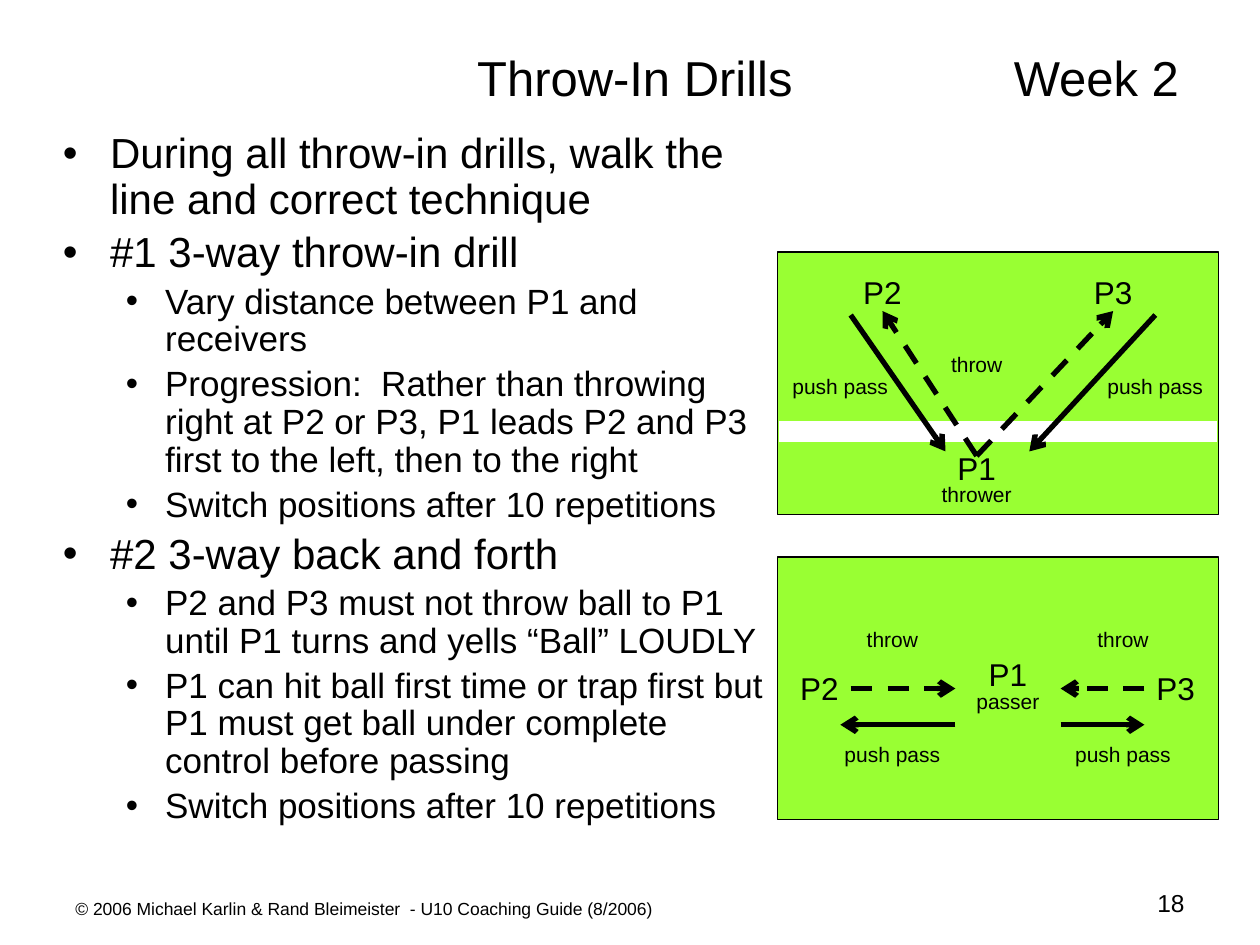
from dataclasses import dataclass
from typing import NamedTuple

from lxml import etree
from pptx import Presentation
from pptx import util as u
from pptx.dml.color import RGBColor
from pptx.enum import dml, shapes, text
from pptx.oxml.ns import qn

Cm, Pt = u.Cm, u.Pt


@dataclass(frozen=True)
class Theme:
    font: str = "Arial"
    ink: str = "000000"
    chalk: str = "FFFFFF"
    grass: str = "99FF33"
    title: int = 28
    head: int = 24
    item: int = 20
    name: int = 18
    page: int = 14
    note: int = 12
    foot: int = 10


T = Theme()


class Box(NamedTuple):
    x: float
    y: float
    w: float
    h: float


class Label(NamedTuple):
    """Text centred on mid; each bit is a string and its size."""
    mid: float
    top: float
    bits: tuple
    w: float = 2.12
    h: float = 0.41
    lead: float = 0.8


class Line(NamedTuple):
    x1: float
    y1: float
    x2: float
    y2: float
    dash: bool = False
    head: bool = True
    color: str = T.ink
    width: float = 3


class Drill(NamedTuple):
    top: float
    labels: list
    lines: list


def player(mid: float, top: float, name: str) -> Label:
    return Label(mid, top, ((name, T.name),), 1.27, 0.76, 1)


def lead(mid: float, top: float, role: str) -> Label:
    return Label(mid, top, (("P1", T.name), (" " + role, T.note)), h=1.02)


def note(mid: float, top: float, words: str) -> Label:
    return Label(mid, top, ((words, T.note),))


def rgb(code: str) -> RGBColor:
    return RGBColor.from_string(code)


def add_run(para, words: str, size: int) -> None:
    run = para.add_run()
    run.text = words
    run.font.name, run.font.size = T.font, Pt(size)
    run.font.color.rgb = rgb(T.ink)


def add_frame(host, box: Box, inset: tuple = (0.25, 0.13)):
    frame = host.add_textbox(*map(Cm, box)).text_frame
    frame.word_wrap = True
    frame.margin_left = frame.margin_right = Cm(inset[0])
    frame.margin_top = frame.margin_bottom = Cm(inset[1])
    return frame


def add_line(host, line: Line, dx: float, dy: float) -> None:
    ends = (line.x1 + dx, line.y1 + dy, line.x2 + dx, line.y2 + dy)
    shape = host.add_connector(shapes.MSO_CONNECTOR.STRAIGHT, *map(Cm, ends))
    shape.line.color.rgb = rgb(line.color)
    shape.line.width = Pt(line.width)
    if line.dash:
        shape.line.dash_style = dml.MSO_LINE.DASH
    if line.head:
        etree.SubElement(shape.line._get_or_add_ln(), qn("a:tailEnd"), type="arrow")
    etree.SubElement(shape._element.spPr, qn("a:effectLst"))


def add_label(host, label: Label, dx: float, dy: float) -> None:
    box = Box(label.mid - label.w / 2 + dx, label.top + dy, label.w, label.h)
    para = add_frame(host, box, (0, 0)).paragraphs[0]
    para.alignment = text.PP_ALIGN.CENTER
    para.line_spacing = label.lead
    for words, size in label.bits:
        add_run(para, words, size)


def add_drill(slide, drill: Drill, left: float = 15.67) -> None:
    host = slide.shapes.add_group_shape().shapes
    field = host.add_shape(shapes.MSO_SHAPE.RECTANGLE,
                           *map(Cm, (left, drill.top, 8.89, 5.29)))
    field.shadow.inherit = False
    field.fill.solid()
    field.fill.fore_color.rgb = rgb(T.grass)
    field.line.color.rgb = rgb(T.ink)
    field.line.width = Pt(0.75)
    for label in drill.labels:
        add_label(host, label, left, drill.top)
    for line in drill.lines:
        add_line(host, line, left, drill.top)


def add_bullet(para, level: int, words: str, first: bool) -> None:
    size, left, hang = ((T.head, 0.95, 0.95), (T.item, 2.06, 0.79))[level]
    para.level = level
    para.line_spacing = 0.9
    para.space_before = Pt(0 if first else size * 0.2)
    props = para._p.get_or_add_pPr()
    props.set("marL", str(Cm(left)))
    props.set("indent", str(-Cm(hang)))
    etree.SubElement(props, qn("a:buFont"), typeface=T.font)
    etree.SubElement(props, qn("a:buChar"), char="•")
    add_run(para, words, size)


POINTS = [
    (0, "During all throw-in drills, walk the line and correct technique"),
    (0, "#1 3-way throw-in drill"),
    (1, "Vary distance between P1 and receivers"),
    (1, "Progression:  Rather than throwing right at P2 or P3, P1 leads P2 "
        "and P3 first to the left, then to the right"),
    (1, "Switch positions after 10 repetitions"),
    (0, "#2 3-way back and forth"),
    (1, "P2 and P3 must not throw ball to P1 until P1 turns and yells “Ball” LOUDLY"),
    (1, "P1 can hit ball first time or trap first but P1 must get ball under "
        "complete control before passing"),
    (1, "Switch positions after 10 repetitions"),
]

# Places are in cm from the top left corner of each field
DRILLS = [
    Drill(5.08,
          [lead(4.02, 4.11, "thrower"), player(2.12, 0.43, "P2"),
           player(6.77, 0.43, "P3"), note(4.02, 2.11, "throw"),
           note(1.27, 2.54, "push pass"), note(7.62, 2.54, "push pass")],
          [Line(0.03, 3.61, 8.86, 3.61, head=False, color=T.chalk, width=12),
           Line(4.02, 4.11, 2.12, 1.19, dash=True),
           Line(4.02, 4.11, 6.77, 1.19, dash=True),
           Line(1.48, 1.27, 3.39, 4.02), Line(7.62, 1.27, 5.08, 4.02)]),
    Drill(11.23,
          [lead(4.65, 2.13, "passer"), player(0.85, 2.26, "P2"),
           player(8.03, 2.26, "P3")]
          + [note(mid, top, words) for mid in (2.32, 6.97)
             for top, words in ((1.5, "throw"), (3.81, "push pass"))],
          [Line(1.48, 2.65, 3.59, 2.65, dash=True),
           Line(7.4, 2.65, 5.71, 2.65, dash=True),
           Line(3.59, 3.38, 1.27, 3.38), Line(5.71, 3.38, 7.4, 3.38)]),
]


def main() -> None:
    deck = Presentation()
    deck.slide_width, deck.slide_height = Cm(25.4), Cm(19.05)
    slide = deck.slides.add_slide(deck.slide_layouts[6])

    # Title, set out with two tab stops
    frame = add_frame(slide.shapes, Box(1.27, 0.76, 22.86, 1.57))
    frame.vertical_anchor = text.MSO_ANCHOR.MIDDLE
    para = frame.paragraphs[0]
    tabs = etree.SubElement(para._p.get_or_add_pPr(), qn("a:tabLst"))
    for stop in (8.1, 18.92):
        etree.SubElement(tabs, qn("a:tab"), pos=str(Cm(stop)), algn="l")
    add_run(para, "\tThrow-In Drills\tWeek 2", T.title)

    # Bulleted list
    frame = add_frame(slide.shapes, Box(1.27, 2.54, 14.18, 15.04), (0, 0.13))
    for i, (level, words) in enumerate(POINTS):
        para = frame.add_paragraph() if i else frame.paragraphs[0]
        add_bullet(para, level, words, i == 0)

    # Drill diagrams
    for drill in DRILLS:
        add_drill(slide, drill)

    # Footer and page number
    frame = add_frame(slide.shapes, Box(1.27, 17.98, 13.54, 0.69))
    add_run(frame.paragraphs[0],
            "© 2006 Michael Karlin & Rand Bleimeister  - U10 Coaching Guide (8/2006)", T.foot)
    para = add_frame(slide.shapes, Box(18.21, 17.78, 5.92, 0.89)).paragraphs[0]
    para.alignment = text.PP_ALIGN.RIGHT
    add_run(para, "18", T.page)

    deck.save("out.pptx")


if __name__ == "__main__":
    main()
